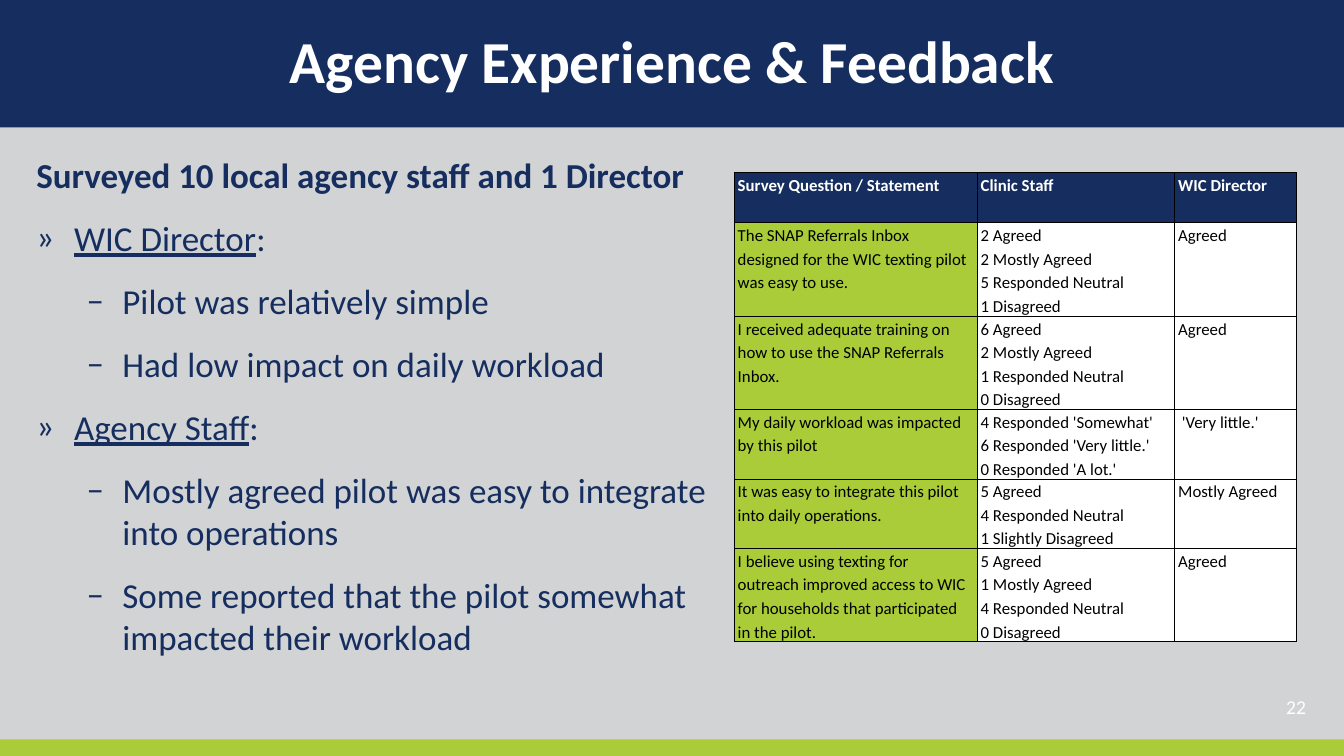
from dataclasses import dataclass
from typing import Any

from lxml.etree import SubElement
from pptx import Presentation
from pptx.dml.color import RGBColor
from pptx.enum.shapes import MSO_SHAPE
from pptx.enum.text import MSO_ANCHOR, PP_ALIGN
from pptx.oxml.ns import qn
from pptx.util import Inches, Pt

COLORS = {"navy": "152E5F", "green": "A9CC38", "gray": "D1D3D4",
          "white": "FFFFFF", "black": "000000"}


@dataclass
class Band:
    top: float
    height: float
    color: str


@dataclass
class Bullet:
    text: str
    kind: str
    tail: str = ""


@dataclass
class Level:
    level: int
    left: float
    hang: float
    char: str


BANDS = [Band(0, 15, "gray"), Band(0, 2.53, "navy"), Band(14.67, 0.33, "green")]
LEVELS = {"group": Level(0, 0.75, 0.75, "»"), "point": Level(1, 1.71, 0.71, "–")}
BULLETS = [
    Bullet("Surveyed 10 local agency staff and 1 Director", "lead"),
    Bullet("WIC Director", "group", ":"),
    Bullet("Pilot was relatively simple", "point"),
    Bullet("Had low impact on daily workload", "point"),
    Bullet("Agency Staff", "group", ":"),
    Bullet("Mostly agreed pilot was easy to integrate into operations", "point"),
    Bullet("Some reported that the pilot somewhat impacted their workload", "point"),
]
COLUMNS = [4.82, 3.92, 2.41]
HEIGHTS = [1, 1.85, 1.85, 1.38, 1.38, 1.85]
SURVEY = [
    ("Survey Question / Statement", "Clinic Staff", "WIC Director"),
    ("The SNAP Referrals Inbox designed for the WIC texting pilot was easy to use.",
     "2 Agreed\n2 Mostly Agreed\n5 Responded Neutral\n1 Disagreed", "Agreed"),
    ("I received adequate training on how to use the SNAP Referrals Inbox.",
     "6 Agreed\n2 Mostly Agreed\n1 Responded Neutral\n0 Disagreed", "Agreed"),
    ("My daily workload was impacted by this pilot",
     "4 Responded 'Somewhat'\n6 Responded 'Very little.'\n0 Responded 'A lot.'",
     " 'Very little.'"),
    ("It was easy to integrate this pilot into daily operations.",
     "5 Agreed\n4 Responded Neutral\n1 Slightly Disagreed", "Mostly Agreed"),
    ("I believe using texting for outreach improved access to WIC for households "
     "that participated in the pilot.",
     "5 Agreed\n1 Mostly Agreed\n4 Responded Neutral\n0 Disagreed", "Agreed"),
]


def rgb(name: str) -> RGBColor:
    """Return a named colour."""
    return RGBColor.from_string(COLORS[name])


def apply(target: Any, formats: dict[str, Any]) -> None:
    """Set each attribute in formats on target."""
    for name, value in formats.items():
        setattr(target, name, value)


def style(r: Any, size: float, color: str, **formats: Any) -> None:
    """Format the font of a run."""
    apply(r.font, {"name": "Calibri", "size": Pt(size), **formats})
    r.font.color.rgb = rgb(color)


def add_box(s: Any, box: tuple[float, ...], inset: float, **formats: Any) -> Any:
    """Add a text box and return its text frame."""
    tf = s.shapes.add_textbox(*map(Inches, box)).text_frame
    sides = ("left", "top", "right", "bottom")
    margins = {f"margin_{side}": Inches(inset) for side in sides}
    apply(tf, {"word_wrap": True, **margins, **formats})
    return tf


def add_label(s: Any, text: str, box: tuple[float, ...], size: float,
              bold: bool, **formats: Any) -> None:
    """Add a centred white line of text."""
    p = add_box(s, box, 0.05, **formats).paragraphs[0]
    p.alignment = PP_ALIGN.CENTER
    r = p.add_run()
    r.text = text
    style(r, size, "white", bold=bold)


def add_band(s: Any, band: Band) -> None:
    """Add a full-width coloured band."""
    sp = s.shapes.add_shape(MSO_SHAPE.RECTANGLE, 0, Inches(band.top),
                            Inches(26.67), Inches(band.height))
    sp.shadow.inherit = False
    sp.fill.solid()
    sp.fill.fore_color.rgb = rgb(band.color)
    sp.line.fill.background()


def add_bullets(s: Any) -> None:
    """Add the survey findings."""
    tf = add_box(s, (0.67, 3, 13.56, 10.37), 0.05)
    for i, item in enumerate(BULLETS):
        p = tf.add_paragraph() if i else tf.paragraphs[0]
        apply(p, {"space_before": Pt(15 if i else 0), "space_after": Pt(15)})
        if item.kind in LEVELS:
            level = LEVELS[item.kind]
            p.level = level.level
            pPr = p._p.get_or_add_pPr()
            pPr.set("marL", str(Inches(level.left)))
            pPr.set("indent", str(-Inches(level.hang)))
            SubElement(pPr, qn("a:buFont"), typeface="Calibri")
            SubElement(pPr, qn("a:buChar"), char=level.char)
        for text, underline in ((item.text, item.kind == "group"), (item.tail, False)):
            if text:
                r = p.add_run()
                r.text = text
                style(r, 50, "navy", bold=item.kind == "lead", underline=underline)


def add_borders(cell: Any) -> None:
    """Give a cell thin black borders."""
    tcPr = cell._tc.get_or_add_tcPr()
    for i, side in enumerate(("a:lnL", "a:lnR", "a:lnT", "a:lnB")):
        ln = tcPr.makeelement(qn(side), {"w": str(Pt(1))})
        fill = SubElement(ln, qn("a:solidFill"))
        SubElement(fill, qn("a:srgbClr"), val=COLORS["black"])
        tcPr.insert(i, ln)


def fill_cell(cell: Any, text: str, fill: str, color: str, bold: bool) -> None:
    """Write and format one table cell."""
    apply(cell, {"margin_left": Inches(0.07), "margin_right": Inches(0.07),
                 "margin_top": 0, "margin_bottom": 0})
    cell.fill.solid()
    cell.fill.fore_color.rgb = rgb(fill)
    add_borders(cell)
    p = cell.text_frame.paragraphs[0]
    apply(p, {"text": text, "line_spacing": 1.15})
    for r in p.runs:
        style(r, 24, color, bold=bold)


def add_survey(s: Any) -> None:
    """Add the survey table."""
    table = s.shapes.add_table(len(SURVEY), len(COLUMNS), Inches(14.57), Inches(3.42),
                               Inches(sum(COLUMNS)), Inches(sum(HEIGHTS))).table
    for column, width in zip(table.columns, COLUMNS):
        column.width = Inches(width)
    for i, (row, height) in enumerate(zip(SURVEY, HEIGHTS)):
        table.rows[i].height = Inches(height)
        for j, text in enumerate(row):
            fill = "navy" if i == 0 else "green" if j == 0 else "white"
            fill_cell(table.cell(i, j), text, fill, "black" if i else "white", i == 0)


def main() -> None:
    """Build and save the slide."""
    prs = Presentation()
    apply(prs, {"slide_width": Inches(26.67), "slide_height": Inches(15)})
    s = prs.slides.add_slide(prs.slide_layouts[6])
    for band in BANDS:
        add_band(s, band)
    add_label(s, "Agency Experience & Feedback", (0, 0.27, 26.67, 1.83), 85, True,
              vertical_anchor=MSO_ANCHOR.MIDDLE)
    add_bullets(s)
    add_survey(s)
    add_label(s, "22", (25.41, 13.73, 0.62, 0.63), 28, False)
    prs.save("out.pptx")


if __name__ == "__main__":
    main()
